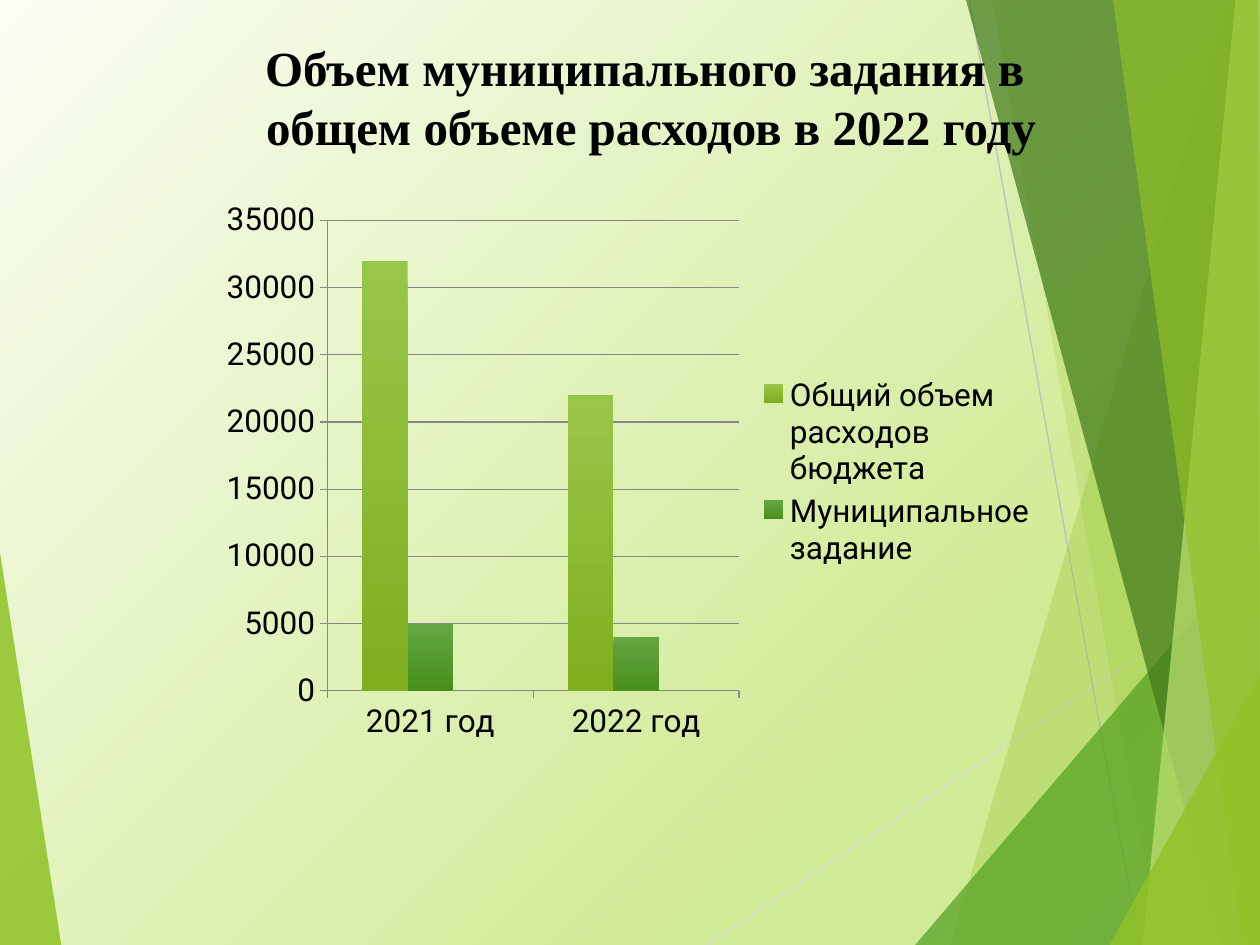
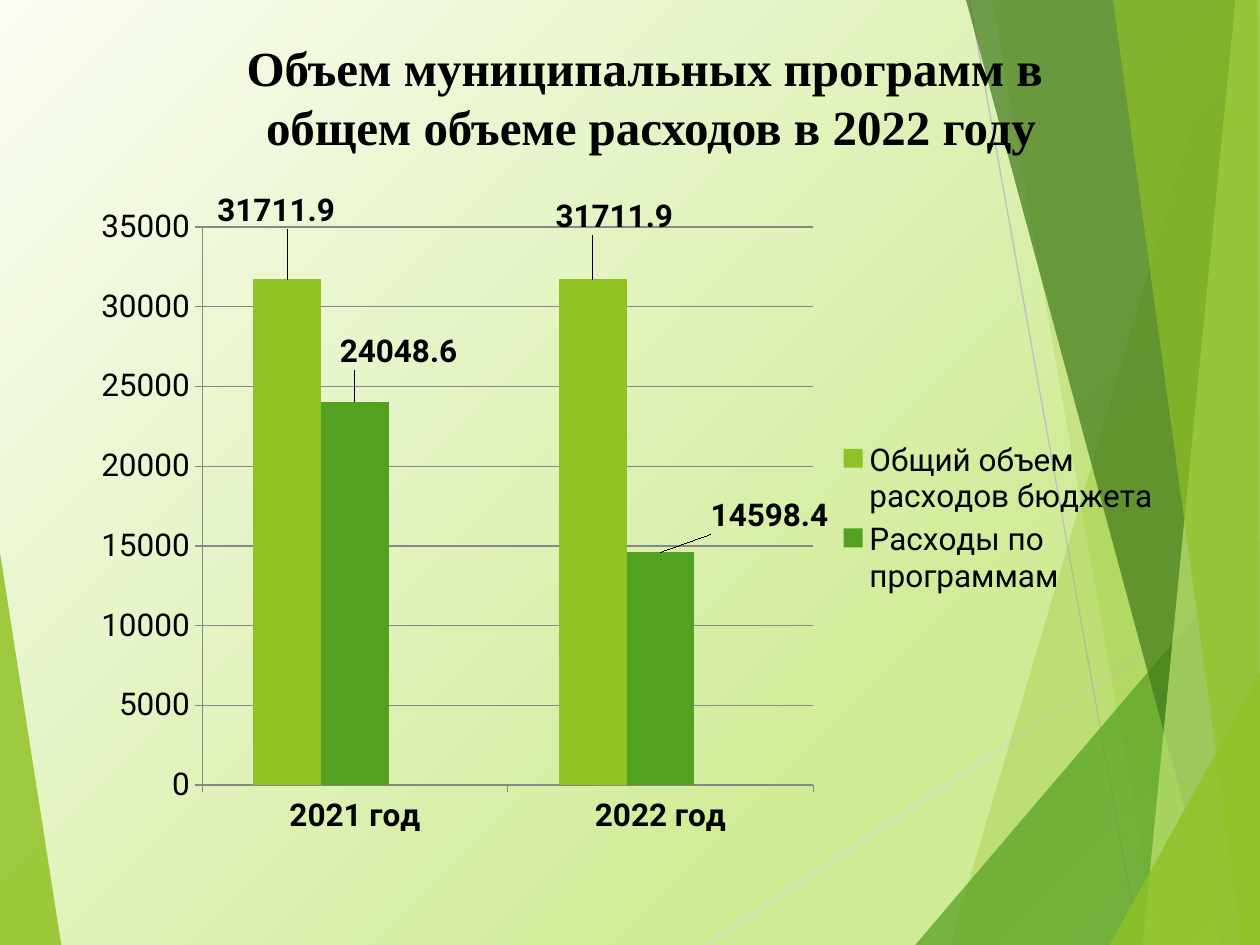
from collections import namedtuple
from dataclasses import dataclass

import lxml.etree
import pptx
import pptx.chart.data
import pptx.dml.color
import pptx.enum.chart
import pptx.enum.shapes
import pptx.enum.text
import pptx.oxml.ns
import pptx.util

Pt = pptx.util.Pt
qn = pptx.oxml.ns.qn
Box = namedtuple("Box", "x y w h")


@dataclass(frozen=True)
class Theme:
    """Colours, fonts and type sizes of the deck."""
    text: str = "000000"
    lime: str = "90C226"
    green: str = "54A021"
    gold: str = "E6B91E"
    forest: str = "3F7819"
    pale: str = "C0E474"
    axis: str = "878787"
    rule_light: str = "D9D9D9"
    rule: str = "BFBFBF"
    title_font: str = "Times New Roman"
    body_font: str = "Roboto"
    title_size: int = 28
    body_size: int = 18
    background: tuple = ((0, "FAFDF3"), (74, "D0EB96"), (83, "D0EB96"), (100, "DFF1B9"))
    shades: tuple = (("98C649", "7FAF1F"), ("62A744", "48901B"))


T = Theme()
PAGE = Box(0, 0, 720, 540)
TITLE = Box(48, 18, 648, 90)
RULES = (((404, 540), (720, 329), T.rule_light), ((554, 0), (651, 540), T.rule))
LEFT_FACET = ((0, 316), (35, 540), (0, 540)), T.lime, 85
RIGHT_FACETS = (
    (((702, 0), (543, 540), (720, 540), (720, 0)), T.lime, 30),
    (((567, 0), (662, 540), (720, 540), (720, 0)), T.lime, 20),
    (((523, 540), (720, 309), (720, 540)), T.green, 72),
    (((552, 0), (698, 540), (720, 540), (720, 0)), T.forest, 70),
    (((706, 0), (653, 540), (720, 540), (720, 0)), T.pale, 70),
    (((636, 0), (710, 540), (720, 540), (719, 0)), T.lime, 65),
    (((634, 540), (720, 385), (720, 540)), T.lime, 80),
)
YEARS = ("2021 год", "2022 год")
TOTAL = "Общий объем расходов бюджета"
SECOND_LINE = "общем объеме расходов в 2022 году"


def rgb(value):
    """Return a colour object for a hex string."""
    return pptx.dml.color.RGBColor.from_string(value)


def set_format(obj, **values):
    """Set every given attribute on an object."""
    for name, value in values.items():
        setattr(obj, name, value)


def set_font(font, size=T.body_size, name=T.body_font, bold=False):
    """Give a font its face, size, weight and the text colour."""
    set_format(font, size=Pt(size), name=name, bold=bold)
    font.color.rgb = rgb(T.text)


def child(parent, tag, **attrs):
    """Append a namespaced child element and return it."""
    return lxml.etree.SubElement(parent, qn(tag), {k: str(v) for k, v in attrs.items()})


def paint_background(s):
    """Fill the slide with the diagonal light green gradient."""
    fill = s.background.fill
    fill.gradient()
    fill.gradient_angle = 315
    stops = s.background._cSld.find(".//" + qn("a:gsLst"))
    for stop in list(stops):
        stops.remove(stop)
    for position, color in T.background:
        child(child(stops, "a:gs", pos=position * 1000), "a:srgbClr", val=color)


def add_facet(s, box, points, color, opacity):
    """Draw one translucent polygon inside the box."""
    moved = [(box.x + x, box.y + y) for x, y in points]
    builder = s.shapes.build_freeform(*moved[0], scale=Pt(1))
    builder.add_line_segments(moved[1:], close=True)
    sp = builder.convert_to_shape()
    sp.shadow.inherit = False
    sp.fill.solid()
    sp.fill.fore_color.rgb = rgb(color)
    sp.line.fill.background()
    child(sp.fill._xPr.find(".//" + qn("a:srgbClr")), "a:alpha", val=opacity * 1000)


def add_rule(s, box, start, end, color):
    """Draw one thin line inside the box."""
    ends = [Pt(offset + v) for point in (start, end) for offset, v in zip(box, point)]
    line = s.shapes.add_connector(pptx.enum.shapes.MSO_CONNECTOR.STRAIGHT, *ends)
    line.line.color.rgb = rgb(color)
    line.line.width = Pt(0.75)
    child(line._element.spPr, "a:effectLst")


def add_decor(s, box):
    """Draw the facets and rules that frame every slide."""
    add_facet(s, box, *LEFT_FACET)
    for rule in RULES:
        add_rule(s, box, *rule)
    for facet in RIGHT_FACETS:
        add_facet(s, box, *facet)


def add_title(s, box, lines):
    """Write the centred bold title, one paragraph a line."""
    tf = s.shapes.add_textbox(*map(Pt, box)).text_frame
    set_format(tf, word_wrap=True, vertical_anchor=pptx.enum.text.MSO_ANCHOR.TOP)
    for i, line in enumerate(lines):
        p = tf.paragraphs[0] if i == 0 else tf.add_paragraph()
        p.alignment = pptx.enum.text.PP_ALIGN.CENTER
        r = p.add_run()
        r.text = line
        set_font(r.font, T.title_size, T.title_font, True)


def add_layout(parent, index, values, inner=False):
    """Insert a manual chart layout at the given child index."""
    layout = lxml.etree.Element(qn("c:layout"))
    manual = child(layout, "c:manualLayout")
    if inner:
        child(manual, "c:layoutTarget", val="inner")
        for name in ("xMode", "yMode"):
            child(manual, "c:" + name, val="edge")
    for name, value in zip("xywh", values):
        child(manual, "c:" + name, val=value)
    parent.insert(index, layout)


def style_axes(chart, bold_years):
    """Format both axes and the gridlines."""
    value, category = chart.value_axis, chart.category_axis
    set_format(value, minimum_scale=0, maximum_scale=35000, major_unit=5000,
               has_major_gridlines=True)
    for axis, bold in ((value, False), (category, bold_years)):
        axis.major_tick_mark = pptx.enum.chart.XL_TICK_MARK.OUTSIDE
        set_font(axis.tick_labels.font, bold=bold)
    for part in (value, category, value.major_gridlines):
        part.format.line.color.rgb = rgb(T.axis)
        part.format.line.width = Pt(0.75)


def add_legend(chart):
    """Put the legend at the right and hide its third entry."""
    chart.has_legend = True
    legend = chart.legend
    set_format(legend, include_in_layout=False,
               position=pptx.enum.chart.XL_LEGEND_POSITION.RIGHT)
    set_font(legend.font)
    entry = lxml.etree.Element(qn("c:legendEntry"))
    child(entry, "c:idx", val=2)
    child(entry, "c:delete", val=1)
    legend._element.insert(1, entry)


def add_labels(series, shifts):
    """Label each column with its value, shifted from the column top."""
    labels = series.data_labels
    labels.show_value = True
    set_font(labels.font, bold=True)
    for i, shift in enumerate(shifts):
        label = series.points[i].data_label
        label.position = pptx.enum.chart.XL_LABEL_POSITION.OUTSIDE_END
        set_font(label.font, bold=True)
        add_layout(labels._element.findall(qn("c:dLbl"))[i], 1, shift)


def fill_series(series, color, shades):
    """Fill a series with a plain colour or a vertical gradient."""
    fill = series.format.fill
    if shades is None:
        fill.solid()
        fill.fore_color.rgb = rgb(color)
        return
    fill.gradient()
    fill.gradient_angle = 270
    for stop, shade in zip(fill.gradient_stops, shades):
        stop.color.rgb = rgb(shade)


def add_columns(s, box, rows, plot_area, shaded=False, bold_years=False, label_shifts=()):
    """Build the clustered column chart inside the box."""
    data = pptx.chart.data.CategoryChartData()
    data.categories = YEARS
    for name, values in (*rows, ("Series 3", (None, None))):
        data.add_series(name, values)
    kind = pptx.enum.chart.XL_CHART_TYPE.COLUMN_CLUSTERED
    chart = s.shapes.add_chart(kind, *map(Pt, box), data).chart
    chart.has_title = False
    set_font(chart.font)
    plot = chart.plots[0]
    set_format(plot, gap_width=150, overlap=0, vary_by_categories=False)
    for i, (series, color) in enumerate(zip(plot.series, (T.lime, T.green, T.gold))):
        series.invert_if_negative = False
        fill_series(series, color, T.shades[i] if shaded and i < len(T.shades) else None)
    for series, shifts in zip(plot.series, label_shifts):
        add_labels(series, shifts)
    style_axes(chart, bold_years)
    add_legend(chart)
    area = chart._chartSpace.find(".//" + qn("c:plotArea"))
    for old in area.findall(qn("c:layout")):
        area.remove(old)
    add_layout(area, 0, plot_area, inner=True)


def add_chart_slide(prs, first_line, box, rows, plot_area, **options):
    """Add one slide with backdrop, title and chart."""
    s = prs.slides.add_slide(prs.slide_layouts[6])
    paint_background(s)
    add_decor(s, PAGE)
    add_title(s, TITLE, (first_line, SECOND_LINE))
    add_columns(s, box, rows, plot_area, **options)


def main():
    """Build and save the deck."""
    prs = pptx.Presentation()
    set_format(prs, slide_width=Pt(PAGE.w), slide_height=Pt(PAGE.h))
    add_chart_slide(
        prs, "Объем муниципального задания в ", Box(120, 110, 480, 320),
        ((TOTAL, (32000, 22000)), ("Муниципальное задание", (5000, 4000))),
        (0.14, 0.05, 0.49, 0.84), shaded=True)
    add_chart_slide(
        prs, "Объем муниципальных программ в ", Box(47, 110, 623.5, 372),
        ((TOTAL, (31711.9, 31711.9)), ("Расходы по программам", (24048.6, 14598.4))),
        (0.11, 0.05, 0.56, 0.86), bold_years=True,
        label_shifts=(((-0.01, -0.07), (0.02, -0.06)), ((0.04, -0.04), (0.1, -0.02))))
    prs.save("out.pptx")


if __name__ == "__main__":
    main()
